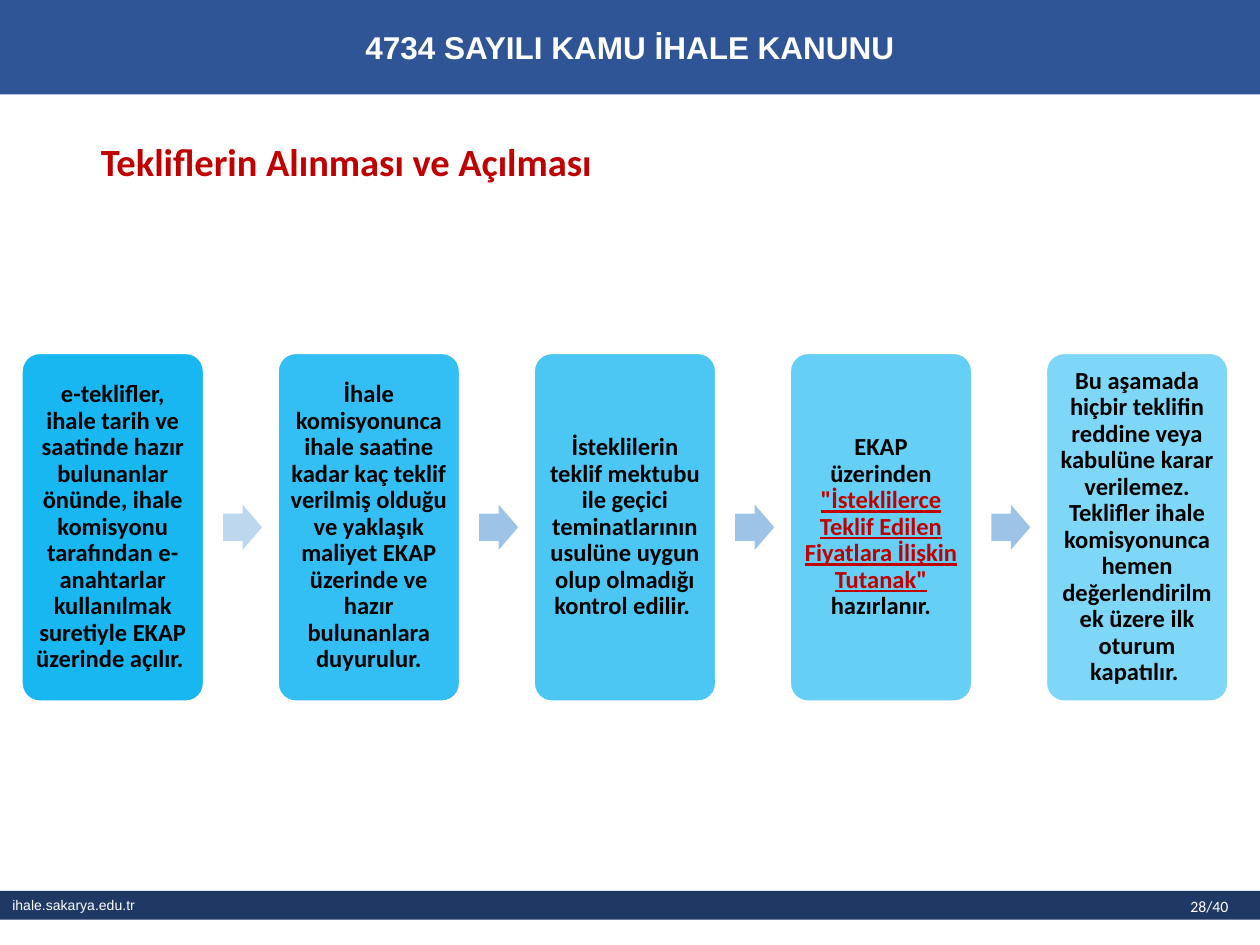
from pptx import Presentation
from pptx.dml.color import RGBColor
from pptx.enum.shapes import MSO_SHAPE
from pptx.enum.text import MSO_ANCHOR, MSO_AUTO_SIZE, PP_ALIGN
from pptx.oxml.ns import qn
from pptx.util import Pt
from lxml import etree

RECT, CARD, ARROW = MSO_SHAPE.RECTANGLE, MSO_SHAPE.ROUNDED_RECTANGLE, MSO_SHAPE.RIGHT_ARROW
TOP, MIDDLE = MSO_ANCHOR.TOP, MSO_ANCHOR.MIDDLE
LEFT, CENTER = PP_ALIGN.LEFT, PP_ALIGN.CENTER
TITLE_ONLY = 5
EMU_PER_PX = 9144

COLORS = {
    "header": "2F5597",
    "footer": "203864",
    "accent": "C00000",
    "card": "00B0F0",
    "first_arrow": "BDD7EE",
    "arrow": "9DC3E6",
    "white": "FFFFFF",
    "black": "000000",
}

STEPS = [
    [("e-teklifler, ihale tarih ve saatinde hazır bulunanlar önünde, ihale komisyonu "
      "tarafından e-anahtarlar kullanılmak suretiyle EKAP üzerinde açılır. ", False)],
    [("İhale komisyonunca ihale saatine kadar kaç teklif verilmiş olduğu ve yaklaşık "
      "maliyet EKAP üzerinde ve hazır bulunanlara duyurulur.", False)],
    [("İsteklilerin teklif mektubu ile geçici teminatlarının usulüne uygun olup "
      "olmadığı kontrol edilir. ", False)],
    [("EKAP üzerinden ", False),
     ("\"İsteklilerce Teklif Edilen Fiyatlara İlişkin Tutanak\" ", True),
     ("hazırlanır.", False)],
    [("Bu aşamada hiçbir teklifin reddine veya kabulüne karar verilemez. Teklifler "
      "ihale komisyonunca hemen değerlendirilmek üzere ilk oturum kapatılır. ", False)],
]


def px(value):
    return round(value * EMU_PER_PX)


def color(name):
    return RGBColor.from_string(COLORS[name])


def add_span(para, text, size, font, color_name, bold=False, underline=False):
    span = para.add_run()
    span.text = text
    span.font.size = Pt(size)
    span.font.name = font
    span.font.bold = bold
    span.font.color.rgb = color(color_name)
    if underline:
        span.font.underline = True


def add_block(page, kind, bounds, fill):
    block = page.shapes.add_shape(kind, *map(px, bounds))
    block.shadow.inherit = False
    block.fill.solid()
    block.fill.fore_color.rgb = color(fill)
    block.line.fill.background()
    return block


def set_opacity(shape, percent):
    tint = shape.fill._xPr.find(qn("a:solidFill"))[0]
    etree.SubElement(tint, qn("a:alpha")).set("val", str(percent * 1000))


def prepare_text(box, anchor, align):
    frame = box.text_frame
    frame.word_wrap = True
    frame.vertical_anchor = anchor
    para = frame.paragraphs[0]
    para.alignment = align
    return para


def add_header(page, bounds):
    band = add_block(page, RECT, bounds, "header")
    para = prepare_text(band, MIDDLE, CENTER)
    add_span(para, "4734 SAYILI KAMU İHALE KANUNU", 18, "Arial", "white", bold=True)


def add_footer(page, bounds):
    left, top, width, height = bounds
    band = add_block(page, RECT, bounds, "footer")
    add_span(prepare_text(band, MIDDLE, LEFT), "ihale.sakarya.edu.tr", 8, "Arial", "white")
    number = page.shapes.add_textbox(px(left + width - 65), px(top), px(93), px(height + 2))
    add_span(prepare_text(number, TOP, LEFT), "28/40", 9, "Calibri", "white")


def place_title(page, bounds):
    title = page.shapes.title
    title.left, title.top, title.width, title.height = map(px, bounds)
    para = prepare_text(title, TOP, LEFT)
    title.text_frame.auto_size = MSO_AUTO_SIZE.NONE
    para.line_spacing = 0.9
    add_span(para, "Tekliflerin Alınması ve Açılması", 22, "Calibri", "accent", bold=True)


def add_card(page, bounds, spans, opacity):
    card = add_block(page, CARD, bounds, "card")
    card.adjustments[0] = 0.1
    set_opacity(card, opacity)
    card.line.color.rgb = color("white")
    card.line.width = Pt(1.5)
    para = prepare_text(card, MIDDLE, CENTER)
    frame = card.text_frame
    frame.margin_left = frame.margin_right = px(6)
    frame.margin_top = frame.margin_bottom = px(6)
    para.line_spacing = 0.9
    for text, marked in spans:
        add_span(para, text, 14, "Calibri", "accent" if marked else "black", True, marked)


def add_process(page, bounds):
    left, top, width, height = bounds
    card_width, arrow_width, arrow_height = 145, 31, 36
    pitch = (width - card_width) / (len(STEPS) - 1)
    for index, spans in enumerate(STEPS):
        card_left = left + index * pitch
        add_card(page, (card_left, top, card_width, height), spans, 90 - 10 * index)
        if index < len(STEPS) - 1:
            arrow_top = top + (height - arrow_height) / 2
            arrow = add_block(page, ARROW,
                              (card_left + card_width + 15, arrow_top, arrow_width, arrow_height),
                              "arrow" if index else "first_arrow")
            arrow.adjustments[0] = 0.6
            arrow.adjustments[1] = 0.5


def main():
    deck = Presentation()
    deck.slide_width, deck.slide_height = px(1000), px(750)
    page = deck.slides.add_slide(deck.slide_layouts[TITLE_ONLY])
    add_footer(page, (0, 707, 1000, 23))
    add_header(page, (0, 0, 1000, 75))
    place_title(page, (70, 109, 905, 47))
    add_process(page, (17, 280, 958, 277))
    deck.save("out.pptx")


if __name__ == "__main__":
    main()
